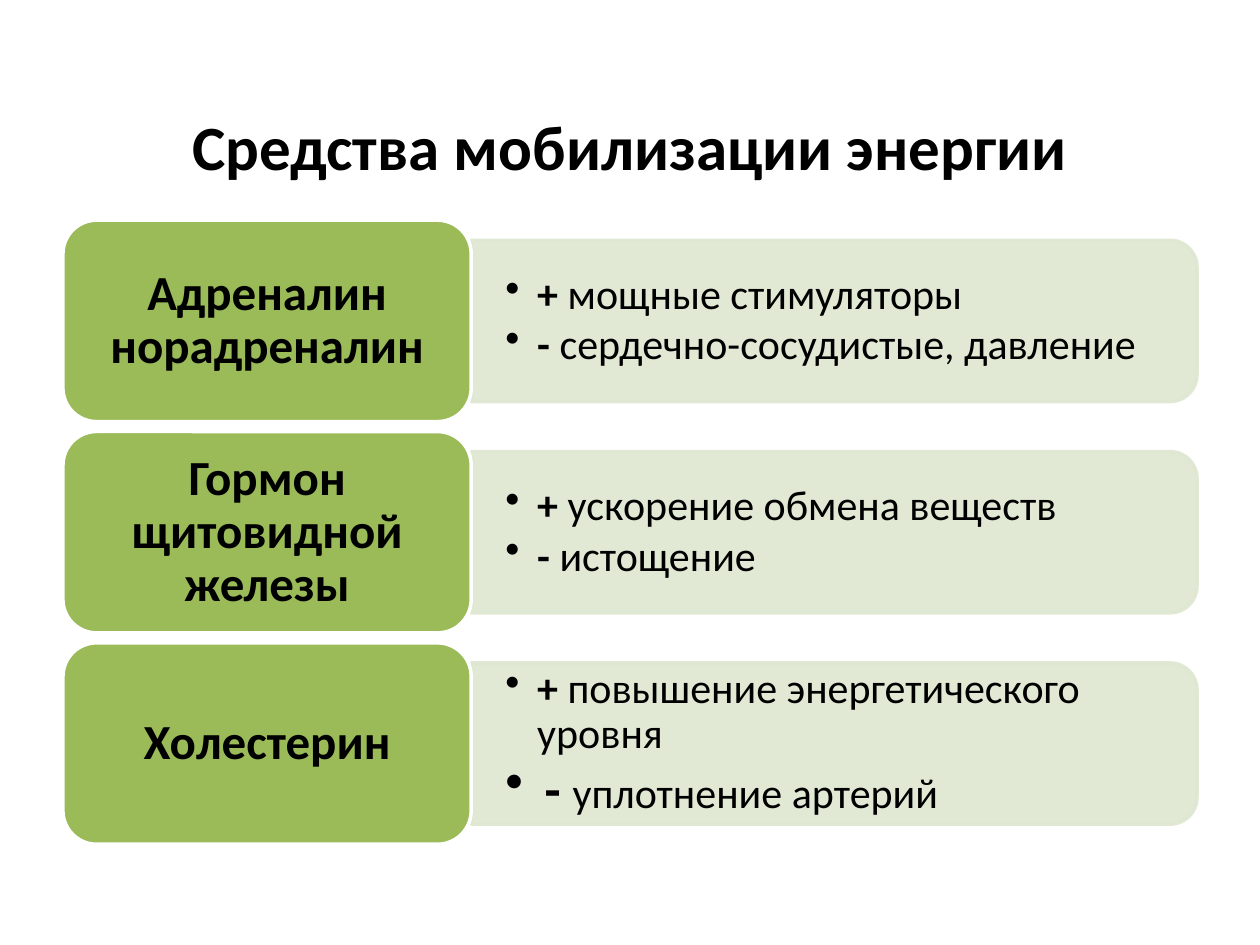
from dataclasses import dataclass
from typing import Any

from lxml.etree import SubElement
from pptx import Presentation
from pptx.dml.color import RGBColor
from pptx.enum.shapes import MSO_SHAPE
from pptx.enum.text import MSO_ANCHOR, PP_ALIGN
from pptx.oxml.ns import qn
from pptx.util import Cm, Pt

ROWS = [
    ("Адреналин норадреналин", [
        ("+", " мощные стимуляторы", 24, 0.64),
        ("- ", "сердечно-сосудистые, давление", 24, 0.64),
    ]),
    ("Гормон щитовидной железы", [
        ("+ ", "ускорение обмена веществ", 24, 0.64),
        ("- ", "истощение", 24, 0.64),
    ]),
    ("Холестерин", [
        ("+", " повышение энергетического уровня", 24, 0.64),
        ("- ", "уплотнение артерий", 30, 0.79),
    ]),
]
MARGIN = 1.27
FIRST_TOP = 4.44
ROW_PITCH = 4.26
CARD_WIDTH, CARD_HEIGHT = 8.23, 4.06
PANEL_WIDTH, PANEL_HEIGHT = 14.63, 3.25


def color(hex_string):
    """Turn a hex string into a colour."""
    return RGBColor.from_string(hex_string)


@dataclass
class SlideBuilder:
    """Hold the style and the current slide, and draw its elements."""

    slide: Any
    font: str = "Calibri"
    ink: str = "000000"
    card_fill: str = "9BBB59"
    card_line: str = "FFFFFF"
    panel_fill: str = "DEE7D1"
    panel_opacity: int = 90

    def style_font(self, font, size=None, bold=None):
        """Apply the typeface and ink, with a size and weight."""
        font.name = self.font
        font.size = Pt(size) if size else None
        font.bold = bold
        font.color.rgb = color(self.ink)

    def set_frame(self, frame, horizontal, vertical):
        """Set wrapping, middle anchoring and insets of a text frame."""
        frame.word_wrap = True
        frame.vertical_anchor = MSO_ANCHOR.MIDDLE
        frame.margin_left = frame.margin_right = Cm(horizontal)
        frame.margin_top = frame.margin_bottom = Cm(vertical)

    def add_title(self, text):
        """Place and format the title placeholder."""
        title = self.slide.shapes.title
        title.left, title.top = Cm(MARGIN), Cm(1.93)
        title.width, title.height = Cm(22.86), Cm(2.01)
        frame = title.text_frame
        frame.text = text
        self.set_frame(frame, 0.25, 0.13)
        para = frame.paragraphs[0]
        para.alignment = PP_ALIGN.CENTER
        self.style_font(para.font, 36, True)

    def add_block(self, kind, left, top, width, height, fill, line):
        """Add a filled and outlined preset shape."""
        block = self.slide.shapes.add_shape(kind, Cm(left), Cm(top), Cm(width), Cm(height))
        block.shadow.inherit = False
        block.fill.solid()
        block.fill.fore_color.rgb = color(fill)
        block.line.color.rgb = color(line)
        block.line.width = Pt(2)
        return block

    def add_card(self, text, top):
        """Add a rounded card with a centred bold label."""
        card = self.add_block(MSO_SHAPE.ROUNDED_RECTANGLE, MARGIN, top, CARD_WIDTH,
                              CARD_HEIGHT, self.card_fill, self.card_line)
        frame = card.text_frame
        frame.text = text
        self.set_frame(frame, 0.5, 0.35)
        para = frame.paragraphs[0]
        para.alignment = PP_ALIGN.CENTER
        para.line_spacing = 0.9
        self.style_font(para.font, 28, True)

    def add_panel(self, left, middle):
        """Add a translucent panel rounded on its right side."""
        panel = self.add_block(MSO_SHAPE.ROUND_2_SAME_RECTANGLE,
                               left + (PANEL_WIDTH - PANEL_HEIGHT) / 2,
                               middle - PANEL_WIDTH / 2,
                               PANEL_HEIGHT, PANEL_WIDTH, self.panel_fill, self.panel_fill)
        panel.rotation = 90
        for tint in panel._element.spPr.iter(qn("a:srgbClr")):
            SubElement(tint, qn("a:alpha"), val=str(self.panel_opacity * 1000))

    def add_bullets(self, effects, left, middle):
        """Add the bulleted list of effects over a panel."""
        height = 2.92
        box = self.slide.shapes.add_textbox(Cm(left), Cm(middle - height / 2),
                                            Cm(14.48), Cm(height))
        frame = box.text_frame
        self.set_frame(frame, 0.69, 0.35)
        for index, (sign, text, sign_size, indent) in enumerate(effects):
            para = frame.paragraphs[0] if index == 0 else frame.add_paragraph()
            para.line_spacing = 0.9
            para.space_after = Pt(3)
            properties = para._p.get_or_add_pPr()
            properties.set("marL", str(Cm(indent)))
            properties.set("indent", str(-Cm(indent)))
            SubElement(properties, qn("a:buChar"), char="•")
            self.style_font(para.font)
            for words, size, bold in ((sign, sign_size, True), (text, 24, False)):
                span = para.add_run()
                span.text = words
                self.style_font(span.font, size, bold)


def main():
    """Build the slide and save the deck."""
    deck = Presentation()
    deck.slide_width, deck.slide_height = Cm(25.4), Cm(19.05)
    page = SlideBuilder(deck.slides.add_slide(deck.slide_layouts[5]))
    page.add_title("Средства мобилизации энергии")
    panel_left = MARGIN + CARD_WIDTH
    for index, (label, effects) in enumerate(ROWS):
        top = FIRST_TOP + index * ROW_PITCH
        middle = top + CARD_HEIGHT / 2
        page.add_panel(panel_left, middle)
        page.add_bullets(effects, panel_left, middle)
        page.add_card(label, top)
    deck.save("out.pptx")


if __name__ == "__main__":
    main()
